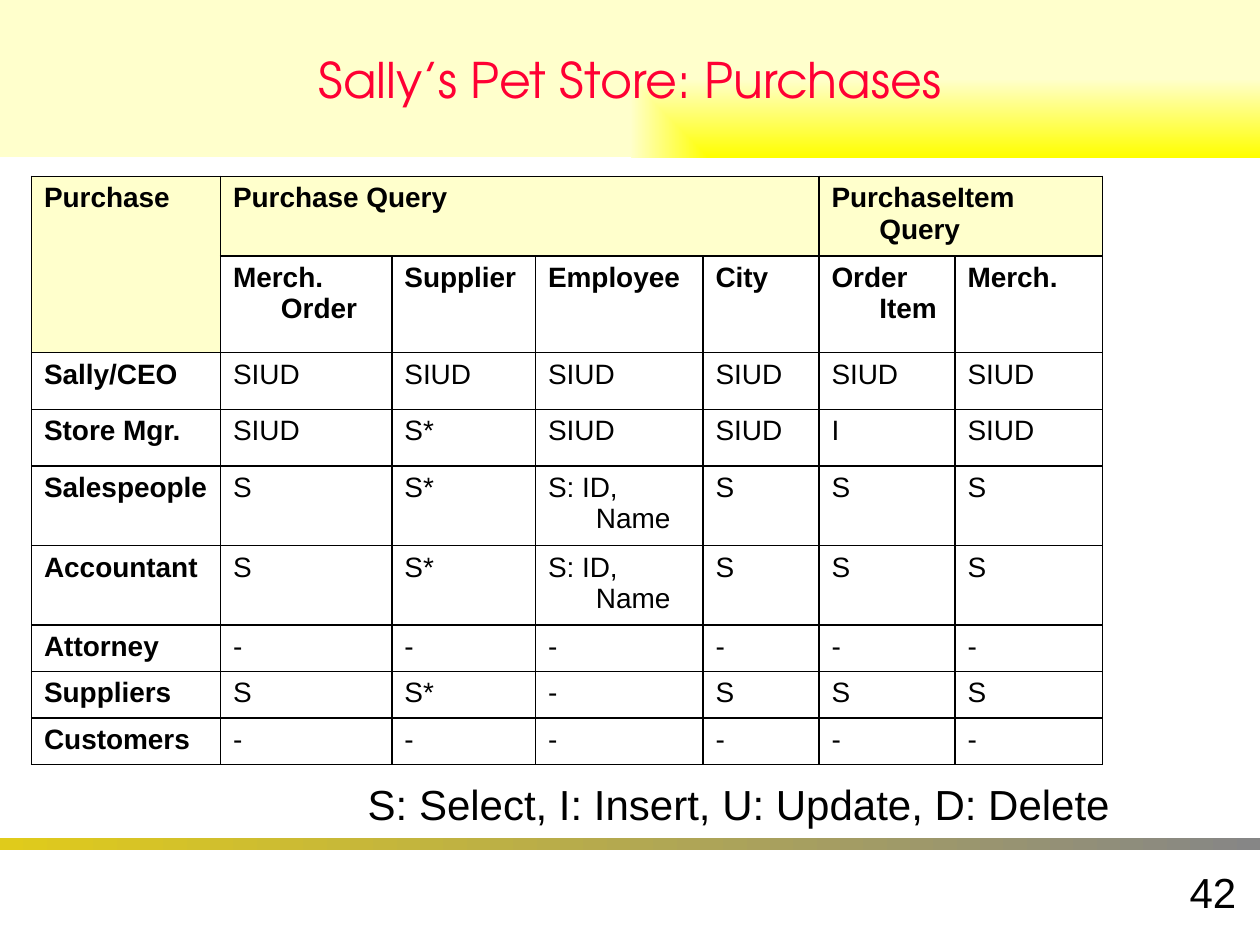
import pptx
import pptx.dml.color
import pptx.enum.shapes
import pptx.enum.text
import pptx.oxml
import pptx.oxml.ns
import pptx.util
from dataclasses import dataclass

Inches = pptx.util.Inches
Align = pptx.enum.text.PP_ALIGN
Anchor = pptx.enum.text.MSO_ANCHOR
Fit = pptx.enum.text.MSO_AUTO_SIZE


@dataclass(frozen=True)
class Theme:
    red: str = "FF0033"
    black: str = "000000"
    cream: str = "FFFFCC"
    yellow: str = "FFFF00"
    gold: str = "E0CB1B"
    grey: str = "868686"
    body: str = "Arial"
    head: str = "TeX Gyre Adventor"
    title: int = 28
    note: int = 24
    cell: int = 16


@dataclass(frozen=True)
class Note:
    text: str
    box: tuple[float, float, float, float]
    align: int
    anchor: int
    fit: int


THEME = Theme()
NOTES = [
    Note("42", (7.83, 6.83, 2.08, 0.5), Align.RIGHT, Anchor.MIDDLE, Fit.NONE),
    Note("S: Select, I: Insert, U: Update, D: Delete", (2.82, 6.13, 6.09, 0.5),
         Align.LEFT, Anchor.TOP, Fit.SHAPE_TO_FIT_TEXT),
]
WIDTHS = [1.5, 1.36, 1.14, 1.33, 0.92, 1.08, 1.17]
HEIGHTS = [0.63, 0.77, 0.45, 0.45, 0.63, 0.63, 0.37, 0.37, 0.37]
ROWS = [
    ["Purchase", "Purchase Query", "", "", "", "PurchaseItem Query", ""],
    ["", "Merch. Order", "Supplier", "Employee", "City", "Order Item", "Merch."],
    ["Sally/CEO"] + ["SIUD"] * 6,
    ["Store Mgr.", "SIUD", "S*", "SIUD", "SIUD", "I", "SIUD"],
    ["Salespeople", "S", "S*", "S: ID, Name", "S", "S", "S"],
    ["Accountant", "S", "S*", "S: ID, Name", "S", "S", "S"],
    ["Attorney"] + ["-"] * 6,
    ["Suppliers", "S", "S*", "-", "S", "S", "S"],
    ["Customers"] + ["-"] * 6,
]
SPANS = [((0, 0), (1, 0)), ((0, 1), (0, 4)), ((0, 5), (0, 6))]
HEADS = 2  # rows of column heads


def color(code: str):
    return pptx.dml.color.RGBColor.from_string(code)


def write(para, text: str, size: int, face: str, ink: str, bold: bool = False) -> None:
    run = para.add_run()
    run.text = text
    font = run.font
    font.size, font.name, font.bold = pptx.util.Pt(size), face, bold
    font.color.rgb = color(ink)


def blend(shape, first: str, last: str) -> None:
    """Fill a shape with a two-stop gradient from left to right."""
    shape.fill.gradient()
    shape.fill.gradient_angle = 0
    for stop, code, place in zip(shape.fill.gradient_stops, (first, last), (0, 1)):
        stop.color.rgb = color(code)
        stop.position = place


def corner(shape) -> None:
    """Make the gradient spread from the lower right corner."""
    grad = shape._element.spPr.find(pptx.oxml.ns.qn("a:gradFill"))
    grad.replace(grad.find(pptx.oxml.ns.qn("a:lin")), pptx.oxml.parse_xml(
        f'<a:path {pptx.oxml.ns.nsdecls("a")} path="rect">'
        '<a:fillToRect l="100000" t="100000"/></a:path>'))


def border(cell) -> None:
    props = cell._tc.get_or_add_tcPr()
    for side in "LRTB":
        props.append(pptx.oxml.parse_xml(
            f'<a:ln{side} {pptx.oxml.ns.nsdecls("a")} w="{pptx.util.Pt(1)}"><a:solidFill>'
            f'<a:srgbClr val="{THEME.black}"/></a:solidFill></a:ln{side}>'))


def add_title(slide, text: str) -> None:
    title = slide.shapes.title
    title.left, title.top = Inches(0), Inches(0)
    title.width, title.height = Inches(10), Inches(1.25)
    blend(title, THEME.yellow, THEME.cream)
    corner(title)
    frame = title.text_frame
    frame.vertical_anchor = Anchor.MIDDLE
    para = frame.paragraphs[0]
    para.alignment = Align.CENTER
    write(para, text, THEME.title, THEME.head, THEME.red)


def add_band(slide) -> None:
    band = slide.shapes.add_shape(pptx.enum.shapes.MSO_SHAPE.RECTANGLE,
                                  Inches(0), Inches(6.65), Inches(10), Inches(0.1))
    band.shadow.inherit = False
    band.line.fill.background()
    blend(band, THEME.gold, THEME.grey)


def add_grid(slide) -> None:
    table = slide.shapes.add_table(len(ROWS), len(WIDTHS), Inches(0.25), Inches(1.4),
                                   Inches(sum(WIDTHS)), Inches(sum(HEIGHTS))).table
    table.first_row = table.horz_banding = False
    for col, width in zip(table.columns, WIDTHS):
        col.width = Inches(width)
    for row, height in zip(table.rows, HEIGHTS):
        row.height = Inches(height)
    for start, end in SPANS:
        table.cell(*start).merge(table.cell(*end))
    for r, row in enumerate(ROWS):
        for c, text in enumerate(row):
            cell = table.cell(r, c)
            border(cell)
            if r == 0 or (r < HEADS and c == 0):
                cell.fill.solid()
                cell.fill.fore_color.rgb = color(THEME.cream)
            else:
                cell.fill.background()
            if text:
                para = cell.text_frame.paragraphs[0]
                # Hanging indent for wrapped lines
                props = para._p.get_or_add_pPr()
                props.set("marL", str(Inches(0.38)))
                props.set("indent", str(Inches(-0.38)))
                write(para, text, THEME.cell, THEME.body, THEME.black,
                      r < HEADS or c == 0)


def add_note(slide, note: Note) -> None:
    frame = slide.shapes.add_textbox(*map(Inches, note.box)).text_frame
    frame.word_wrap = False
    frame.auto_size = note.fit
    frame.vertical_anchor = note.anchor
    para = frame.paragraphs[0]
    para.alignment = note.align
    write(para, note.text, THEME.note, THEME.body, THEME.black)


def main() -> None:
    deck = pptx.Presentation()
    deck.slide_width, deck.slide_height = Inches(10), Inches(7.5)
    slide = deck.slides.add_slide(deck.slide_layouts.get_by_name("Title Only"))
    add_title(slide, "Sally’s Pet Store: Purchases")
    add_band(slide)
    add_grid(slide)
    for note in NOTES:
        add_note(slide, note)
    deck.save("out.pptx")


if __name__ == "__main__":
    main()
